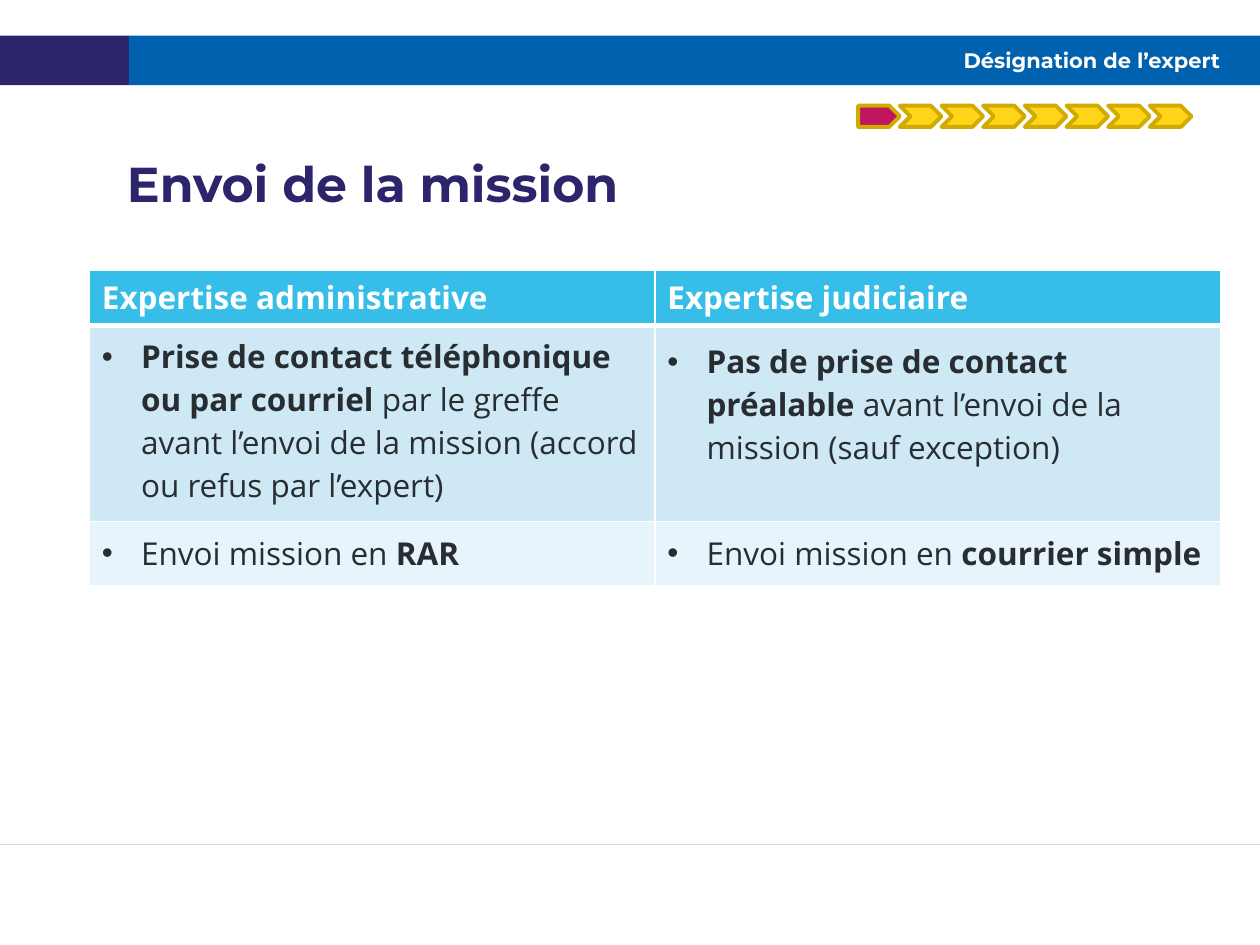
from dataclasses import dataclass

from lxml import etree
from pptx import Presentation
from pptx.dml.color import RGBColor
from pptx.enum import shapes, text
from pptx.oxml import ns
from pptx.util import Cm, Pt


@dataclass(frozen=True)
class Theme:
    heading_font: str = "Montserrat"
    body_font: str = "Open Sans"
    section_size: int = 12
    heading_size: int = 28
    table_size: int = 18
    white: str = "FFFFFF"
    ink: str = "272D31"
    navy: str = "2C256B"
    blue: str = "0062AE"
    rule: str = "D2D9DA"
    header: str = "36BDE8"
    bands: tuple = ("CEE8F6", "E8F4FB")
    current: str = "C01662"
    step: str = "FFD419"
    step_line: str = "D2AB00"


T = Theme()
MARGIN, CONTENT_W = 1.8, 22.8
STEPS, STEP_W = 8, 0.84
BOTTOM, TOP = text.MSO_ANCHOR.BOTTOM, text.MSO_ANCHOR.TOP

HEADERS = ("Expertise administrative", "Expertise judiciaire")
# Each cell: runs as (text, bold), top margin, bottom margin, anchor
ROWS = (
    (
        ([("Prise de contact téléphonique ou par courriel ", True),
          ("par le greffe avant l’envoi de la mission (accord ou refus par l’expert)", False)],
         0.2, 0.3, BOTTOM),
        ([("Pas de prise de contact préalable ", True),
          ("avant l’envoi de la mission (sauf exception)", False)],
         0.3, 0.13, TOP),
    ),
    (
        ([("Envoi mission en ", False), ("RAR", True)], 0.2, 0.13, TOP),
        ([("Envoi mission en ", False), ("courrier simple", True)], 0.2, 0.13, TOP),
    ),
)
ROW_HEIGHTS = (1.1, 3.95, 1.3)


def rgb(value):
    return RGBColor.from_string(value)


def style_run(r, font, size, color, bold=True):
    r.font.name, r.font.size, r.font.bold = font, Pt(size), bold
    r.font.color.rgb = rgb(color)


def set_bullet(p, indent, hanging=0.0, char=None):
    """Set the indents and the bullet, or no bullet, of a paragraph."""
    pPr = p._p.get_or_add_pPr()
    pPr.set("marL", str(Cm(indent)))
    pPr.set("indent", str(-Cm(hanging)))
    if char:
        etree.SubElement(pPr, ns.qn("a:buFont"), typeface="Arial")
        etree.SubElement(pPr, ns.qn("a:buChar"), char=char)
    else:
        etree.SubElement(pPr, ns.qn("a:buNone"))


def add_block(s, kind, box, fill, line=None, width=0.0):
    sp = s.shapes.add_shape(kind, *map(Cm, box))
    sp.shadow.inherit = False
    sp.fill.solid()
    sp.fill.fore_color.rgb = rgb(fill)
    if line:
        sp.line.color.rgb = rgb(line)
        sp.line.width = Pt(width)
    else:
        sp.line.fill.background()


def add_rule(s, y, width):
    line = s.shapes.add_connector(shapes.MSO_CONNECTOR.STRAIGHT, 0, Cm(y), Cm(width), Cm(y))
    line.line.color.rgb = rgb(T.rule)
    line.line.width = Pt(0.75)
    etree.SubElement(line.element.spPr, ns.qn("a:effectLst"))


def fill_placeholder(sp, box, content, size, color, anchor):
    """Move a placeholder to the front, then place and format its text."""
    sp.element.getparent().append(sp.element)
    sp.left, sp.top, sp.width, sp.height = map(Cm, box)
    tf = sp.text_frame
    tf.text = content
    tf.margin_left = tf.margin_right = tf.margin_top = tf.margin_bottom = 0
    tf.auto_size = text.MSO_AUTO_SIZE.NONE
    tf.word_wrap = True
    tf.vertical_anchor = anchor
    p = tf.paragraphs[0]
    p.space_before = Pt(0)
    style_run(p.runs[0], T.heading_font, size, color)
    return p


def set_borders(cell, bottom):
    tcPr = cell._tc.get_or_add_tcPr()
    for side, width in (("L", 1), ("R", 1), ("T", 1), ("B", bottom)):
        ln = etree.SubElement(tcPr, ns.qn("a:ln" + side), w=str(Pt(width)))
        fill = etree.SubElement(ln, ns.qn("a:solidFill"))
        etree.SubElement(fill, ns.qn("a:srgbClr"), val=T.white)


def fill_cell(cell, runs, fill, color, border=1):
    set_borders(cell, border)
    cell.fill.solid()
    cell.fill.fore_color.rgb = rgb(fill)
    p = cell.text_frame.paragraphs[0]
    for content, bold in runs:
        r = p.add_run()
        r.text = content
        style_run(r, T.body_font, T.table_size, color, bold)
    return p


def add_comparison(s):
    frame = s.shapes.add_table(len(ROW_HEIGHTS), len(HEADERS), Cm(MARGIN), Cm(5.44),
                               Cm(CONTENT_W), Cm(sum(ROW_HEIGHTS)))
    table = frame.table
    table.first_row = table.horz_banding = False
    for row, height in zip(table.rows, ROW_HEIGHTS):
        row.height = Cm(height)
    for c, header in enumerate(HEADERS):
        fill_cell(table.cell(0, c), [(header, True)], T.header, T.white, 3)
    for i, (row, band) in enumerate(zip(ROWS, T.bands), start=1):
        for c, (runs, top, bottom, anchor) in enumerate(row):
            cell = table.cell(i, c)
            p = fill_cell(cell, runs, band, T.ink, 3 if i == 0 else 1)
            set_bullet(p, 0.79, 0.79, "•")
            cell.margin_top, cell.margin_bottom = Cm(top), Cm(bottom)
            cell.vertical_anchor = anchor


def add_progress(s):
    for i in range(STEPS):
        first = i == 0
        kind = shapes.MSO_SHAPE.PENTAGON if first else shapes.MSO_SHAPE.CHEVRON
        add_block(s, kind, (17.3 + i * STEP_W, 2.13, STEP_W, 0.43),
                  T.current if first else T.step, T.step_line, 2.25)


def main():
    prs = Presentation()
    prs.slide_width, prs.slide_height = Cm(25.4), Cm(19.05)
    s = prs.slides.add_slide(prs.slide_layouts[1])
    title, body = s.placeholders[0], s.placeholders[1]

    # Top band and footer rule
    rect = shapes.MSO_SHAPE.RECTANGLE
    add_block(s, rect, (0, 0.72, 2.6, 1), T.navy)
    add_block(s, rect, (2.6, 0.72, 22.8, 1), T.blue)
    add_rule(s, 17.02, 25.4)

    # Section title in the band
    p = fill_placeholder(title, (2.8, 0.72, 21.8, 1), "Désignation de l’expert",
                         T.section_size, T.white, text.MSO_ANCHOR.MIDDLE)
    p.alignment = text.PP_ALIGN.RIGHT

    # Comparison table
    add_comparison(s)

    # Slide heading
    p = fill_placeholder(body, (MARGIN, 3.23, CONTENT_W, 1.3), "Envoi de la mission",
                         T.heading_size, T.navy, TOP)
    p.line_spacing = 0.9
    set_bullet(p, 0.76)

    # Progress arrows
    add_progress(s)
    prs.save("out.pptx")


if __name__ == "__main__":
    main()
